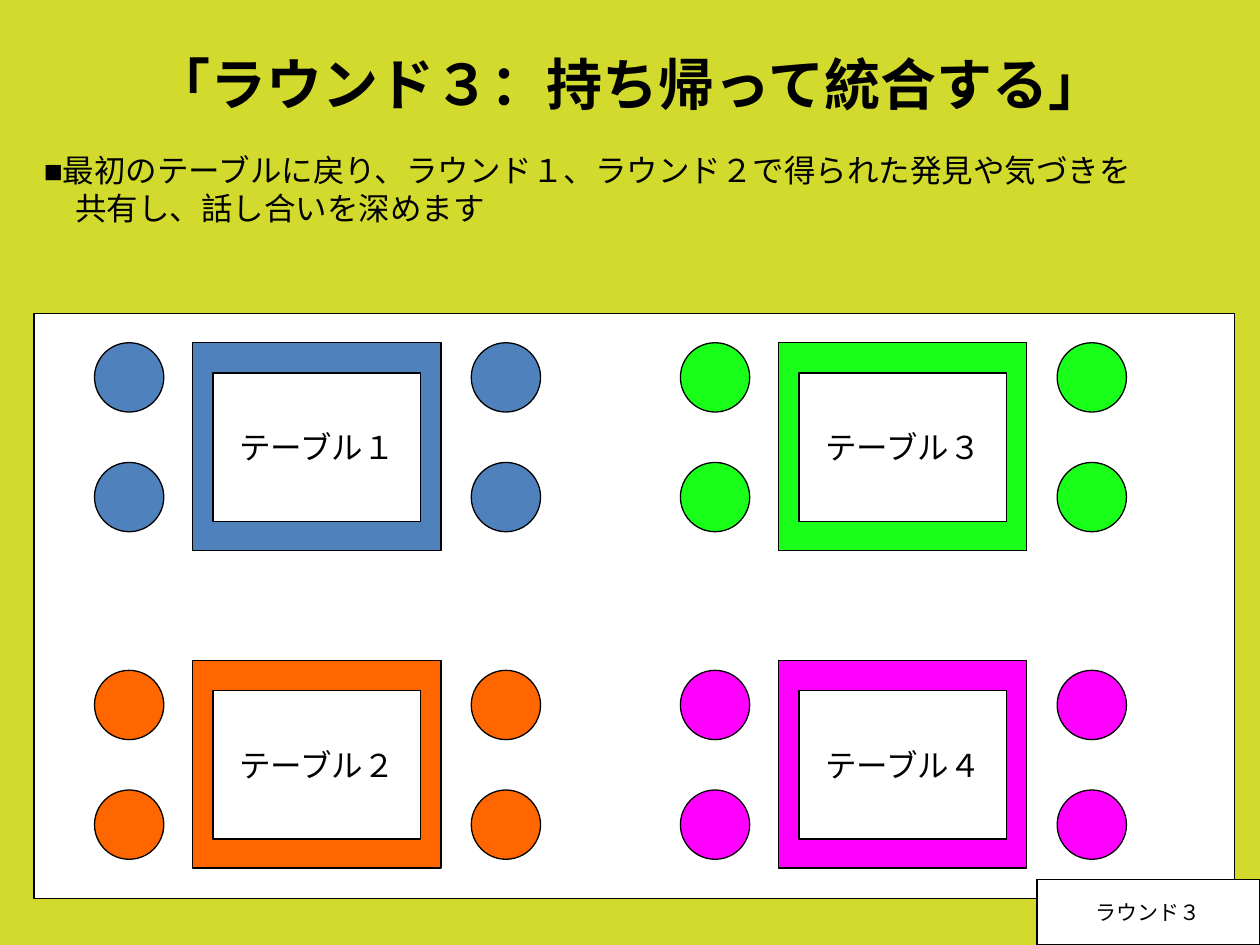
from dataclasses import dataclass
from itertools import product

from lxml import etree
from pptx import Presentation
from pptx import util as u
from pptx.dml import color as clr
from pptx.enum import shapes, text
from pptx.oxml import ns


@dataclass(frozen=True)
class Theme:
    ground: str = "D2DB2D"
    ink: str = "000000"
    paper: str = "FFFFFF"
    blue: str = "4F81BD"
    orange: str = "FF6600"
    green: str = "00FF00"
    pink: str = "FF00FF"
    font: str = "Arial"
    head_font: str = "Noto Sans CJK JP"
    head: int = 32
    body: int = 18
    small: int = 12
    line: float = 0.75


THEME = Theme()
RECT = shapes.MSO_SHAPE.RECTANGLE
OVAL = shapes.MSO_SHAPE.OVAL
CENTER = text.PP_ALIGN.CENTER
LEFT = text.PP_ALIGN.LEFT
MIDDLE = text.MSO_ANCHOR.MIDDLE
TOP = text.MSO_ANCHOR.TOP

SEAT = 0.55
PITCH_X = 4.65
PITCH_Y = 2.52


def rgb(code):
    return clr.RGBColor.from_string(code)


def place(x, y, w, h):
    return [u.Inches(n) for n in (x, y, w, h)]


def write(para, words, size=THEME.body, font=THEME.font, bold=False,
          align=CENTER, indent=0):
    """Add one run to a paragraph, with the font set for Japanese too."""
    para.alignment = align
    if indent:
        para._p.get_or_add_pPr().set("marL", str(u.Inches(indent)))
    run = para.add_run()
    run.text = words
    run.font.size = u.Pt(size)
    run.font.bold = bold
    run.font.color.rgb = rgb(THEME.ink)
    run.font.name = font
    props = run._r.get_or_add_rPr()
    etree.SubElement(props, ns.qn("a:ea"), typeface=font)


def add_box(slide, box, anchor=TOP, wrap=False):
    frame = slide.shapes.add_textbox(*place(*box)).text_frame
    frame.word_wrap = wrap
    frame.vertical_anchor = anchor
    return frame


def add_form(slide, kind, box, fill, alpha=100):
    form = slide.shapes.add_shape(kind, *place(*box))
    form.shadow.inherit = False
    form.fill.solid()
    form.fill.fore_color.rgb = rgb(fill)
    form.line.color.rgb = rgb(THEME.ink)
    form.line.width = u.Pt(THEME.line)
    if alpha < 100:
        tint = form._element.spPr.find(ns.qn("a:solidFill"))[0]
        etree.SubElement(tint, ns.qn("a:alpha"), val=str(alpha * 1000))
    return form


def add_label(slide, box, words, size):
    frame = add_form(slide, RECT, box, THEME.paper).text_frame
    frame.word_wrap = False
    frame.vertical_anchor = MIDDLE
    write(frame.paragraphs[0], words, size=size)


def add_group(slide, col, row, words, fill, alpha=100):
    """Draw one table with its label and four seats."""
    x = 0.75 + col * PITCH_X
    y = 2.72 + row * PITCH_Y
    add_form(slide, RECT, (x + 0.78, y, 1.97, 1.65), fill, alpha)
    top = y + row * 0.08
    for dx, dy in product((0, 2.99), (0, 0.95)):
        add_form(slide, OVAL, (x + dx, top + dy, SEAT, SEAT), fill, alpha)
    add_label(slide, (x + 0.94, y + 0.24, 1.65, 1.18), words, THEME.body)


def add_title(slide):
    frame = add_box(slide, (0.5, 0.3, 9, 1.25), anchor=MIDDLE, wrap=True)
    frame.margin_bottom = u.Inches(0.58)
    write(frame.paragraphs[0], "「ラウンド３：持ち帰って統合する」",
          size=THEME.head, font=THEME.head_font, bold=True)


def add_lead(slide):
    frame = add_box(slide, (0.25, 1.15, 8.95, 1))
    first = frame.paragraphs[0]
    write(first, "■", bold=True, align=LEFT)
    write(first, "最初のテーブルに戻り、ラウンド１、ラウンド２で得られた発見や気づきを",
          align=LEFT)
    write(frame.add_paragraph(), "共有し、話し合いを深めます",
          align=LEFT, indent=0.25)


def main():
    deck = Presentation()
    deck.slide_width = u.Inches(10)
    deck.slide_height = u.Inches(7.5)
    slide = deck.slides.add_slide(deck.slide_layouts[6])
    slide.background.fill.solid()
    slide.background.fill.fore_color.rgb = rgb(THEME.ground)

    add_title(slide)
    add_form(slide, RECT, (0.27, 2.49, 9.53, 4.64), THEME.paper)
    add_group(slide, 0, 0, "テーブル１", THEME.blue)
    add_group(slide, 0, 1, "テーブル２", THEME.orange)
    add_group(slide, 1, 0, "テーブル３", THEME.green, alpha=90)
    add_group(slide, 1, 1, "テーブル４", THEME.pink)
    add_lead(slide)
    add_label(slide, (8.23, 6.98, 1.77, 0.52), "ラウンド３", THEME.small)
    deck.save("out.pptx")


if __name__ == "__main__":
    main()
